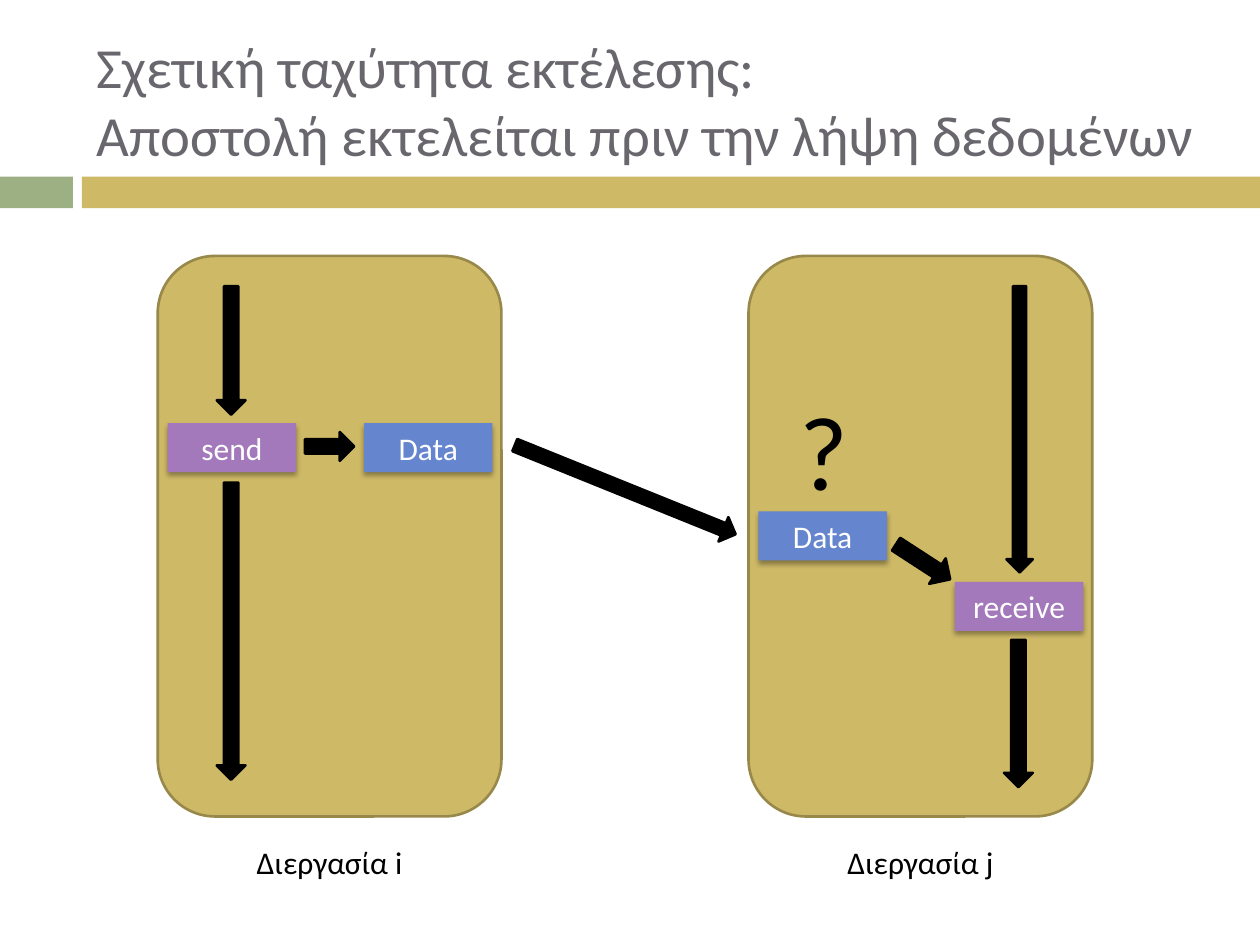
"""Build a slide on a send that runs before its matching receive."""
from dataclasses import dataclass

from lxml import etree
from pptx import Presentation
from pptx.dml.color import RGBColor
from pptx.enum.shapes import MSO_SHAPE
from pptx.enum.text import MSO_ANCHOR, PP_ALIGN
from pptx.oxml.ns import qn
from pptx.util import Cm, Pt

RECT, ROUNDED = MSO_SHAPE.RECTANGLE, MSO_SHAPE.ROUNDED_RECTANGLE
DOWN, RIGHT = MSO_SHAPE.DOWN_ARROW, MSO_SHAPE.RIGHT_ARROW
TOP, MIDDLE = MSO_ANCHOR.TOP, MSO_ANCHOR.MIDDLE
LEFT, CENTER = PP_ALIGN.LEFT, PP_ALIGN.CENTER


@dataclass(frozen=True)
class Theme:
    font: str = "Calibri"
    title: str = "69676D"
    ink: str = "000000"
    light: str = "FFFFFF"
    sage: str = "9CB084"
    gold: str = "CEB966"
    gold_edge: str = "98894B"
    operation: str = "A379BB"
    data: str = "6585CF"
    title_size: float = 32.4
    body_size: float = 18
    question_size: float = 60
    edge_width: float = 1.5


THEME = Theme()


def write(frame, text, size, color, align=CENTER, anchor=TOP):
    frame.word_wrap = True
    frame.vertical_anchor = anchor
    frame.text = text
    paragraph = frame.paragraphs[0]
    paragraph.alignment = align
    paragraph.font.name = THEME.font
    paragraph.font.size = Pt(size)
    paragraph.font.color.rgb = RGBColor.from_string(color)


def add_block(slide, kind, bounds, fill, edge=None):
    block = slide.shapes.add_shape(kind, *map(Cm, bounds))
    block.shadow.inherit = False
    block.fill.solid()
    block.fill.fore_color.rgb = RGBColor.from_string(fill)
    if edge:
        block.line.color.rgb = RGBColor.from_string(edge)
        block.line.width = Pt(THEME.edge_width)
    else:
        block.line.fill.background()
    return block


def add_text(slide, bounds, text, size, color, **layout):
    frame = slide.shapes.add_textbox(*map(Cm, bounds)).text_frame
    write(frame, text, size, color, **layout)
    return frame


def add_shadow(block):
    effects = block._element.spPr.find(qn("a:effectLst"))
    shadow = etree.SubElement(
        effects, qn("a:outerShdw"), blurRad=str(Pt(3)), dist=str(Pt(2)),
        dir="5400000", rotWithShape="0")
    tint = etree.SubElement(shadow, qn("a:srgbClr"), val=THEME.ink)
    etree.SubElement(tint, qn("a:alpha"), val="35000")


def add_step(slide, left, top, text, fill):
    step = add_block(slide, RECT, (left, top, 2.59, 0.99), fill)
    add_shadow(step)
    write(step.text_frame, text, THEME.body_size, THEME.light, anchor=MIDDLE)


def add_arrow(slide, kind, bounds, rotation=0):
    arrow = add_block(slide, kind, bounds, THEME.ink, THEME.ink)
    arrow.rotation = rotation


def add_process(slide, left, label):
    width = 6.93
    add_block(slide, ROUNDED, (left, 5.16, width, 11.3), THEME.gold, THEME.gold_edge)
    add_text(slide, (left, 16.87, width, 1.02), label, THEME.body_size, THEME.ink)


def add_heading(slide):
    add_block(slide, RECT, (0, 3.56, 1.47, 0.64), THEME.sage)
    add_block(slide, RECT, (1.65, 3.56, 23.75, 0.64), THEME.gold)
    add_text(
        slide, (1.7, 0.64, 23.2, 2.74),
        "Σχετική ταχύτητα εκτέλεσης:\vΑποστολή εκτελείται πριν την λήψη δεδομένων",
        THEME.title_size, THEME.title, align=LEFT, anchor=MIDDLE)


def add_question(slide):
    frame = add_text(slide, (15.8, 7.77, 1.6, 2.57), "?", THEME.question_size, THEME.ink)
    frame.margin_left = frame.margin_right = frame.margin_top = frame.margin_bottom = 0


def main():
    deck = Presentation()
    deck.slide_width, deck.slide_height = Cm(25.4), Cm(19.05)
    slide = deck.slides.add_slide(deck.slide_layouts[6])
    add_heading(slide)

    for left, label in ((3.18, "Διεργασία i"), (15.09, "Διεργασία j")):
        add_process(slide, left, label)

    for left, top, text, fill in (
        (3.38, 8.53, "send", THEME.operation),
        (7.34, 8.53, "Data", THEME.data),
        (19.25, 11.73, "receive", THEME.operation),
        (15.29, 10.31, "Data", THEME.data),
    ):
        add_step(slide, left, top, text, fill)

    for kind, bounds, rotation in (
        (DOWN, (4.37, 5.77, 0.58, 2.59), 0),
        (DOWN, (4.37, 9.73, 0.58, 5.99), 0),
        (RIGHT, (6.15, 8.71, 0.99, 0.58), 0),
        (DOWN, (12.34, 7.47, 0.53, 4.8), 292),
        (RIGHT, (17.96, 11.02, 1.3, 0.61), 33),
        (DOWN, (20.29, 5.77, 0.53, 5.77), 0),
        (DOWN, (20.24, 12.9, 0.58, 2.97), 0),
    ):
        add_arrow(slide, kind, bounds, rotation)

    add_question(slide)
    deck.save("out.pptx")


if __name__ == "__main__":
    main()
